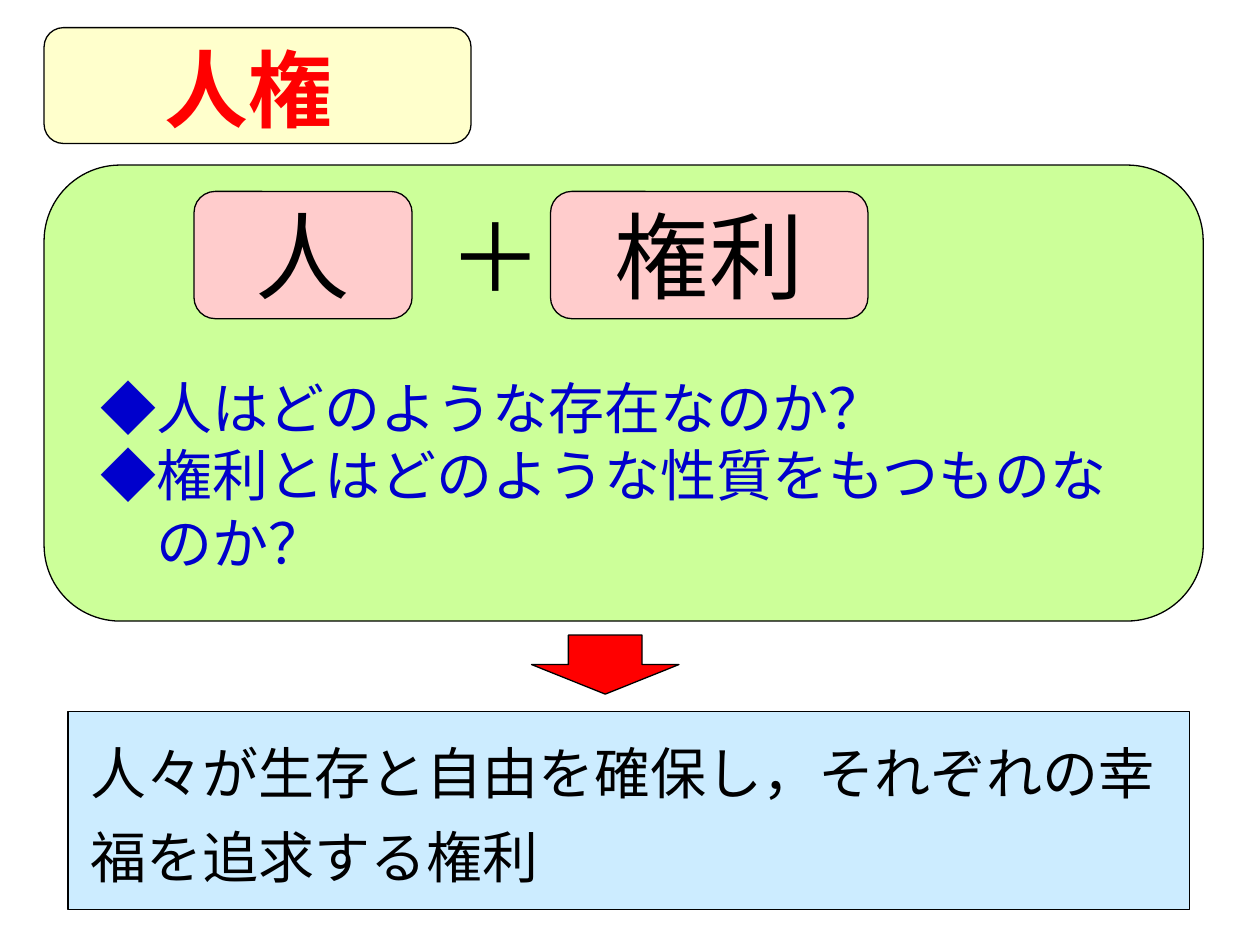
import pptx
import pptx.util
import pptx.dml.color
import pptx.enum.shapes
import pptx.enum.text
import pptx.oxml.ns
import lxml.etree

Pt = pptx.util.Pt
MSO = pptx.enum.shapes.MSO_SHAPE
ALIGN = pptx.enum.text.PP_ALIGN
ANCHOR = pptx.enum.text.MSO_ANCHOR

THEME = {
    "colours": {
        "panel": "CCFF99", "heading": "FFFFCC", "term": "FFCCCC",
        "answer": "CCECFF", "arrow": "FF0000", "line": "000000",
        "title": "FF0000", "text": "000000", "question": "0000CC",
    },
    "sizes": {"title": 48, "term": 54, "body": 32},
    "fonts": {"title": "Noto Sans CJK JP", "term": "Karla",
              "question": "Karla", "answer": "Times New Roman",
              "east_asian": "Noto Sans CJK JP"},
    "line_width": 0.75,
    "body_leading": 38.6,
}

TITLE = ("人権", (11.5, 24.5, 260.6, 51))
BACKDROPS = [
    (MSO.ROUNDED_RECTANGLE, "panel", (25.2, 94.3, 662.4, 260.6)),
    (MSO.ROUNDED_RECTANGLE, "heading", (25.2, 15.8, 244, 66.2)),
]
TERM_TOP, TERM_HEIGHT = 109.4, 72.7
TERMS = [("人", 110.9, 124.6), ("権利", 314.6, 181.4)]
PLUS = ("＋", 249.1, 51.1)
QUESTIONS = (
    ["◆人はどのような存在なのか？", "◆権利とはどのような性質をもつものなのか？"],
    (50.4, 206.6, 618.5, 123.8),
)
ANSWER_FRAME = (38.9, 406.8, 640.8, 113)
ANSWER = (
    ["人々が生存と自由を確保し，それぞれの幸", "福を追求する権利"],
    (44.6, 415.4, 629.3, 85.7),
)
ARROW = (303.8, 362.9, 84.2, 33.8)


def colour(name):
    return pptx.dml.color.RGBColor.from_string(THEME["colours"][name])


def add_block(s, kind, fill, box, outlined=True):
    sp = s.shapes.add_shape(kind, *map(Pt, box))
    sp.shadow.inherit = False
    sp.fill.solid()
    sp.fill.fore_color.rgb = colour(fill)
    if outlined:
        sp.line.color.rgb = colour("line")
        sp.line.width = Pt(THEME["line_width"])
    else:
        sp.line.fill.background()
    return sp


def add_run(p, text, size, font, ink, bold=False):
    r = p.add_run()
    r.text = text
    r.font.size = Pt(THEME["sizes"][size])
    r.font.name = THEME["fonts"][font]
    r.font.bold = bold
    r.font.color.rgb = colour(ink)
    ea = lxml.etree.Element(pptx.oxml.ns.qn("a:ea"))
    ea.set("typeface", THEME["fonts"]["east_asian"])
    r.font.fill
    r._r.rPr.find(pptx.oxml.ns.qn("a:latin")).addnext(ea)


def write_term(sp, text, align):
    tf = sp.text_frame
    tf.word_wrap = True
    tf.vertical_anchor = ANCHOR.MIDDLE
    p = tf.paragraphs[0]
    p.alignment = align
    add_run(p, text, "term", "term", "text")


def write_body(sp, lines, font, ink, gap=0, hanging=0):
    tf = sp.text_frame
    tf.word_wrap = True
    tf.vertical_anchor = ANCHOR.TOP
    tf.margin_top = Pt(6.4)
    for i, line in enumerate(lines):
        p = tf.paragraphs[0] if i == 0 else tf.add_paragraph()
        p.alignment = ALIGN.LEFT
        p.line_spacing = Pt(THEME["body_leading"])
        p.space_before = Pt(gap if i else 0)
        if hanging:
            pPr = p._p.get_or_add_pPr()
            pPr.set("marL", str(Pt(hanging)))
            pPr.set("indent", str(-Pt(hanging)))
        add_run(p, line, "body", font, ink)


def place_title(s):
    text, box = TITLE
    sp = s.shapes.title
    sp.left, sp.top, sp.width, sp.height = map(Pt, box)
    tf = sp.text_frame
    tf.word_wrap = True
    tf.auto_size = pptx.enum.text.MSO_AUTO_SIZE.NONE
    tf.vertical_anchor = ANCHOR.TOP
    p = tf.paragraphs[0]
    p.alignment = ALIGN.CENTER
    p.line_spacing = 0.9
    p.space_before = Pt(0)
    add_run(p, text, "title", "title", "title", bold=True)
    sp.element.getparent().append(sp.element)


def main():
    prs = pptx.Presentation()
    prs.slide_width, prs.slide_height = Pt(720), Pt(540)
    s = prs.slides.add_slide(prs.slide_layouts[5])

    for kind, fill, box in BACKDROPS:
        add_block(s, kind, fill, box)
    for text, left, width in TERMS:
        sp = add_block(s, MSO.ROUNDED_RECTANGLE, "term",
                       (left, TERM_TOP, width, TERM_HEIGHT))
        write_term(sp, text, ALIGN.CENTER)
    place_title(s)

    text, left, width = PLUS
    plus = s.shapes.add_textbox(*map(Pt, (left, TERM_TOP, width, TERM_HEIGHT)))
    write_term(plus, text, ALIGN.LEFT)

    lines, box = QUESTIONS
    questions = s.shapes.add_textbox(*map(Pt, box))
    write_body(questions, lines, "question", "question",
               hanging=THEME["sizes"]["body"])

    add_block(s, MSO.RECTANGLE, "answer", ANSWER_FRAME)
    lines, box = ANSWER
    answer = add_block(s, MSO.RECTANGLE, "answer", box, outlined=False)
    write_body(answer, lines, "answer", "text", gap=9.6)

    add_block(s, MSO.DOWN_ARROW, "arrow", ARROW)
    prs.save("out.pptx")


if __name__ == "__main__":
    main()
